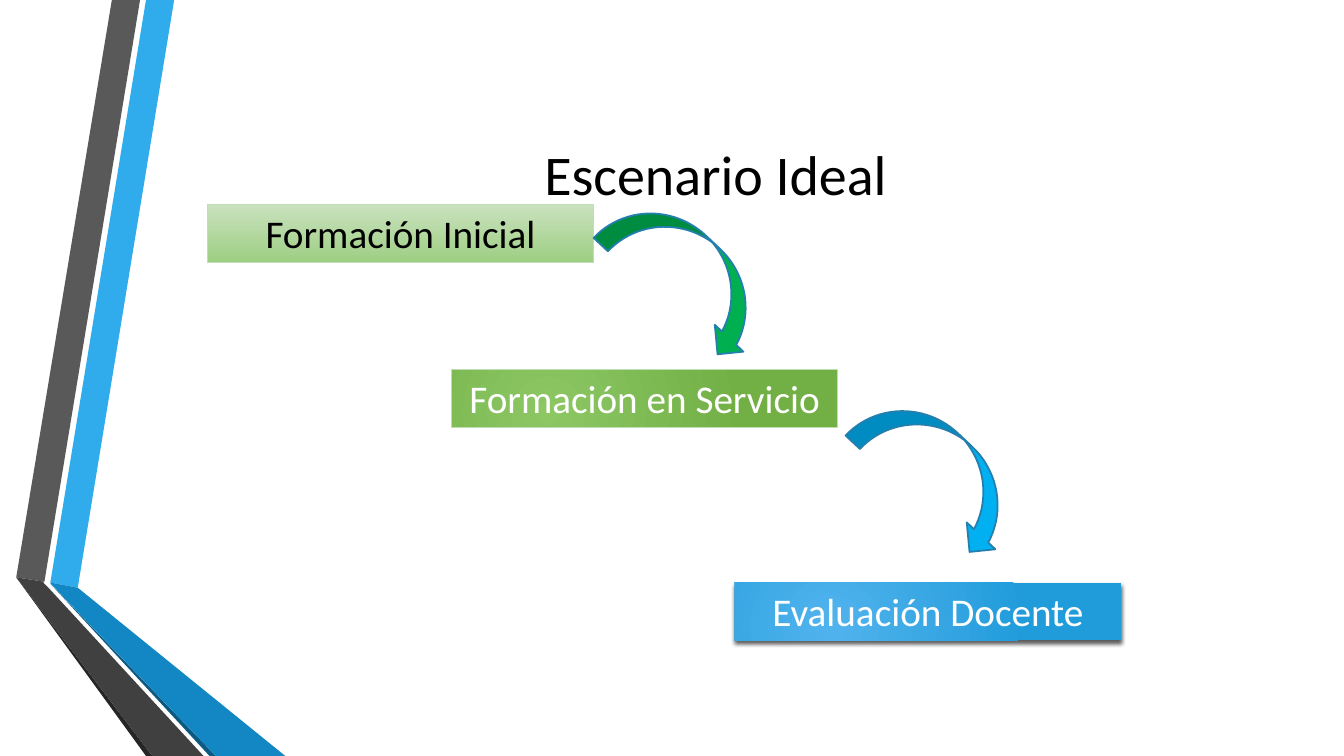
from lxml import etree
from pptx import Presentation
from pptx.dml.color import RGBColor
from pptx.enum.shapes import MSO_SHAPE as SHAPE
from pptx.enum.text import MSO_ANCHOR as ANCHOR, MSO_AUTO_SIZE as AUTO, PP_ALIGN as ALIGN
from pptx.oxml import parse_xml
from pptx.oxml.ns import nsdecls, qn
from pptx.util import Cm, Pt

RIBBONS = [
    ("30ACEC", [(1.27, 14.68), (1.96, 14.81), (4.39, 0), (3.68, 0)]),
    ("595959", [(3.53, 0), (2.82, 0), (0.41, 14.55), (1.12, 14.66)]),
    ("262626", [(0.41, 14.55), (3.68, 19.05), (3.84, 19.05)]),
    ("0C5A82", [(1.27, 14.71), (5.28, 19.05), (5.44, 19.05)]),
    ("1287C3", [(1.27, 14.7), (5.44, 19.05), (7.19, 19.05), (1.96, 14.81), (1.27, 14.68)]),
    ("404040", [(5.13, 19.05), (1.22, 14.81), (1.09, 14.68), (1.12, 14.66),
                (0.41, 14.55), (3.84, 19.05)]),
]
STAGES = [
    ("Formación Inicial", 5.23, 5.16, ("C9E2BE", "9ECE83"), "000000", "C0DEB3", False),
    ("Formación en Servicio", 11.38, 9.32, ("8CC764", "72AF45"), "FFFFFF", "C0DEB3", True),
    ("Evaluación Docente", 18.52, 14.68, ("51B3ED", "219CDB"), "FFFFFF", None, True),
]
ARROWS = [(14.99, 5.92, "00B050"), (21.34, 10.9, "00B0F0")]


def rgb(value):
    return RGBColor.from_string(value)


class Deck:
    """Holds the text style and the current slide, and draws its elements."""

    def __init__(self, prs, font):
        self.font = font
        self.s = prs.slides.add_slide(prs.slide_layouts[5])

    def label(self, sp, text, size, color, anchor):
        tf = sp.text_frame
        tf.word_wrap = True
        tf.vertical_anchor = anchor
        p = tf.paragraphs[0]
        p.alignment = ALIGN.CENTER
        r = p.add_run()
        r.text = text
        r.font.name = self.font
        r.font.size = Pt(size)
        r.font.color.rgb = rgb(color)

    def outline(self, sp, color, width):
        if color:
            sp.line.color.rgb = rgb(color)
            sp.line.width = Pt(width)
        else:
            sp.line.fill.background()

    def title(self, text, left, top, width, height):
        sp = self.s.shapes.title
        sp.left, sp.top, sp.width, sp.height = Cm(left), Cm(top), Cm(width), Cm(height)
        self.label(sp, text, 40, "000000", ANCHOR.MIDDLE)

    def ribbon(self, color, points):
        (x, y), *rest = points
        builder = self.s.shapes.build_freeform(Cm(x), Cm(y))
        builder.add_line_segments([(Cm(a), Cm(b)) for a, b in rest], close=True)
        sp = builder.convert_to_shape()
        sp.shadow.inherit = False
        sp.fill.solid()
        sp.fill.fore_color.rgb = rgb(color)
        self.outline(sp, None, 0)

    def stage(self, text, left, top, colors, ink, border, radial):
        sp = self.s.shapes.add_shape(SHAPE.RECTANGLE, Cm(left), Cm(top), Cm(9.73), Cm(1.45))
        sp.shadow.inherit = False
        sp.fill.gradient()
        sp.fill.gradient_angle = 270
        for stop, color, position in zip(sp.fill.gradient_stops, colors, (0, 1)):
            stop.color.rgb = rgb(color)
            stop.position = position
        if radial:
            lin = next(sp.element.spPr.iter(qn("a:lin")))
            lin.getparent().replace(lin, parse_xml(
                f'<a:path {nsdecls("a")} path="circle"><a:fillToRect l="50000" t="100000" '
                'r="100000" b="50000"/></a:path>'))
        self.outline(sp, border, 0.75)
        self.label(sp, text, 28, ink, ANCHOR.TOP)
        sp.text_frame.auto_size = AUTO.SHAPE_TO_FIT_TEXT
        return sp

    def drop_shadow(self, sp):
        effects = sp.element.spPr.find(qn("a:effectLst"))
        shadow = etree.SubElement(effects, qn("a:outerShdw"), blurRad=str(Pt(3)),
                                  dist=str(Pt(2)), dir="5400000", rotWithShape="0")
        color = etree.SubElement(shadow, qn("a:srgbClr"), val="000000")
        etree.SubElement(color, qn("a:alpha"), val="64000")

    def arrow(self, left, top, color):
        sp = self.s.shapes.add_shape(SHAPE.CURVED_DOWN_ARROW, Cm(left), Cm(top), Cm(4.78), Cm(1.98))
        sp.shadow.inherit = False
        sp.rotation = 43.2
        sp.fill.solid()
        sp.fill.fore_color.rgb = rgb(color)
        self.outline(sp, "247FAF", 1.25)


def main():
    prs = Presentation()
    prs.slide_width, prs.slide_height = Cm(33.87), Cm(19.05)
    deck = Deck(prs, "Calibri")
    for ribbon in RIBBONS:
        deck.ribbon(*ribbon)
    deck.title("Escenario Ideal", 4.11, 1.91, 27.84, 4.88)
    boxes = [deck.stage(*stage) for stage in STAGES]
    deck.drop_shadow(boxes[-1])
    for arrow in ARROWS:
        deck.arrow(*arrow)
    prs.save("out.pptx")


if __name__ == "__main__":
    main()
